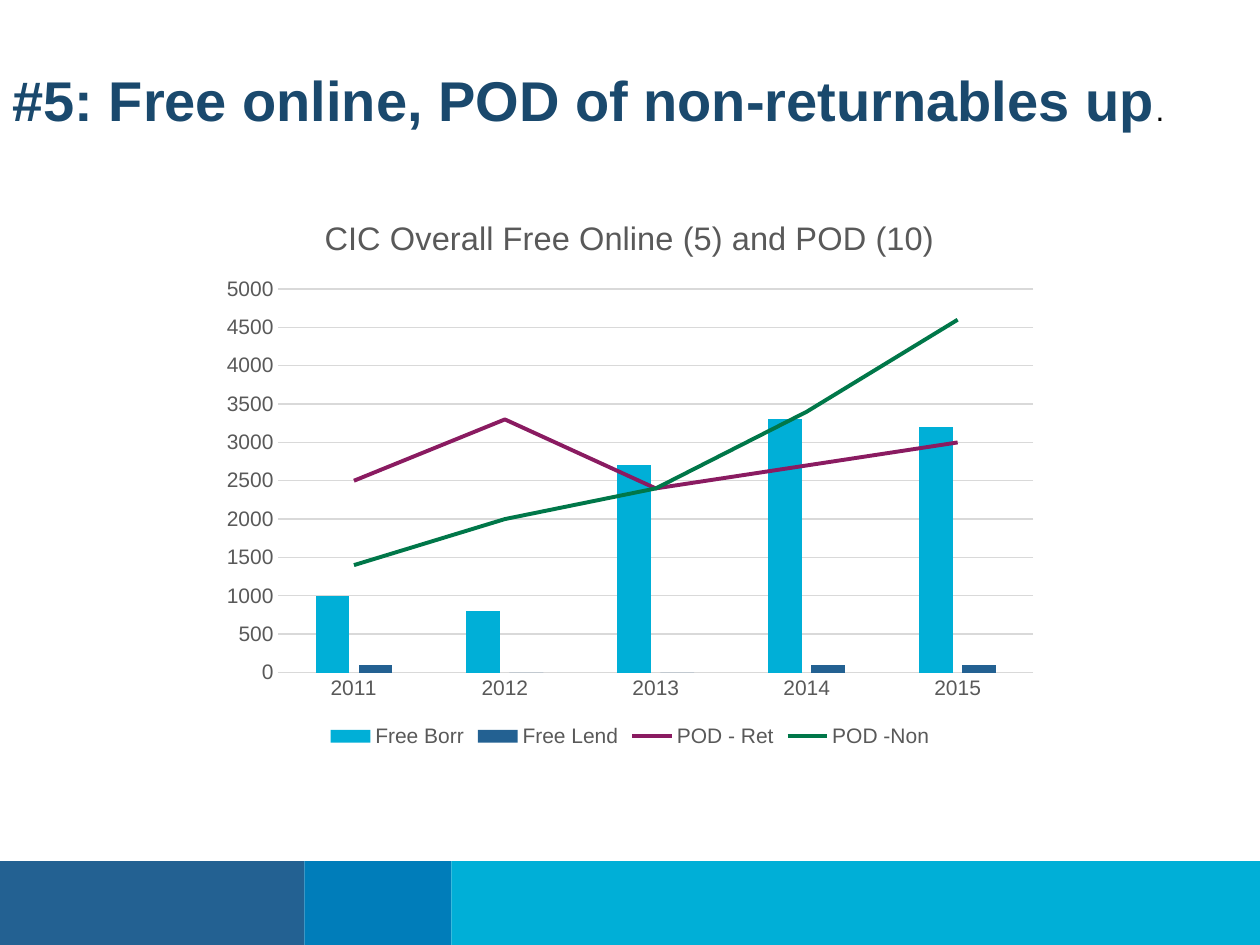
from typing import NamedTuple

from lxml import etree
from pptx import Presentation
from pptx import util as u
from pptx.chart.data import CategoryChartData
from pptx.dml.color import RGBColor
from pptx.enum import chart as ch, shapes, text
from pptx.oxml.ns import qn

Pt = u.Pt
FONT = "Arial"
HUES = {
    "navy": "236192", "blue": "007DBA", "cyan": "00AFD7",
    "plum": "8A1B61", "green": "007749", "title": "1A496D",
    "black": "000000", "gray": "595959", "grid": "D9D9D9",
}


class Band(NamedTuple):
    left: float
    width: float
    hue: str


class Row(NamedTuple):
    name: str
    vals: tuple
    hue: str
    line: bool = False


BANDS = [
    Band(0, 174, "navy"),
    Band(174, 84, "blue"),
    Band(258, 462, "cyan"),
]
YEARS = ["2011", "2012", "2013", "2014", "2015"]
ROWS = [
    Row("Free Borr", (1000, 800, 2700, 3300, 3200), "cyan"),
    Row("Free Lend", (100, 0, 0, 100, 100), "navy"),
    Row("POD - Ret", (2500, 3300, 2400, 2700, 3000), "plum", True),
    Row("POD -Non", (1400, 2000, 2400, 3400, 4600), "green", True),
]


def rgb(hue: str) -> RGBColor:
    return RGBColor.from_string(HUES[hue])


def style(font, size: float, hue: str, bold: bool = False) -> None:
    font.name = FONT
    font.size = Pt(size)
    font.bold = bold
    font.color.rgb = rgb(hue)


def stroke(line, hue: str, width: float) -> None:
    line.color.rgb = rgb(hue)
    line.width = Pt(width)


def draw_band(slide, band: Band) -> None:
    box = slide.shapes.add_shape(
        shapes.MSO_SHAPE.RECTANGLE, Pt(band.left), Pt(492), Pt(band.width), Pt(48))
    box.shadow.inherit = False
    box.fill.solid()
    box.fill.fore_color.rgb = rgb(band.hue)
    box.line.fill.background()


def split_lines(chart) -> None:
    """Move the line rows from the bar plot to a line plot on the same axes."""
    bar = chart.plots[0]._element
    plot = bar.makeelement(qn("c:lineChart"))
    bar.addnext(plot)
    etree.SubElement(plot, qn("c:grouping")).set("val", "standard")
    etree.SubElement(plot, qn("c:varyColors")).set("val", "0")
    for row, ser in zip(ROWS, bar.findall(qn("c:ser"))):
        if row.line:
            for flag in ser.findall(qn("c:invertIfNegative")):
                ser.remove(flag)
            plot.append(ser)
    etree.SubElement(plot, qn("c:marker")).set("val", "1")
    for axis in bar.findall(qn("c:axId")):
        etree.SubElement(plot, qn("c:axId")).set("val", axis.get("val"))


def draw_chart(slide) -> None:
    data = CategoryChartData()
    data.categories = YEARS
    for row in ROWS:
        data.add_series(row.name, row.vals)
    chart = slide.shapes.add_chart(
        ch.XL_CHART_TYPE.COLUMN_CLUSTERED,
        Pt(120), Pt(110), Pt(480), Pt(320), data).chart
    style(chart.font, 10, "black")

    # Title and legend
    chart.has_title = True
    head = chart.chart_title.text_frame
    head.text = "CIC Overall Free Online (5) and POD (10)"
    style(head.paragraphs[0].font, 18.6, "gray")
    chart.chart_title.include_in_layout = False
    chart.has_legend = True
    chart.legend.position = ch.XL_LEGEND_POSITION.BOTTOM
    chart.legend.include_in_layout = False
    style(chart.legend.font, 12, "gray")

    # Axes
    for axis in (chart.category_axis, chart.value_axis):
        axis.major_tick_mark = ch.XL_TICK_MARK.NONE
        axis.minor_tick_mark = ch.XL_TICK_MARK.NONE
        style(axis.tick_labels.font, 12, "gray")
    stroke(chart.category_axis.format.line, "grid", 0.75)
    scale = chart.value_axis
    scale.minimum_scale, scale.maximum_scale, scale.major_unit = 0, 5000, 500
    scale.format.line.fill.background()
    stroke(scale.major_gridlines.format.line, "grid", 0.75)

    # Bars and lines
    bars = chart.plots[0]
    bars.vary_by_categories = False
    bars.gap_width, bars.overlap = 219, -27
    split_lines(chart)
    for row, ser in zip(ROWS, [s for p in chart.plots for s in p.series]):
        if row.line:
            ser.smooth = False
            ser.marker.style = ch.XL_MARKER_STYLE.NONE
            stroke(ser.format.line, row.hue, 2.25)
        else:
            ser.format.fill.solid()
            ser.format.fill.fore_color.rgb = rgb(row.hue)


def draw_title(slide) -> None:
    frame = slide.shapes.add_textbox(Pt(0), Pt(34), Pt(720), Pt(46)).text_frame
    frame.word_wrap = True
    frame.auto_size = text.MSO_AUTO_SIZE.SHAPE_TO_FIT_TEXT
    para = frame.paragraphs[0]
    for words, size, hue, bold in (
        ("#5: Free online, POD of non-returnables up", 32, "title", True),
        (".", 18, "black", False),
    ):
        run = para.add_run()
        run.text = words
        style(run.font, size, hue, bold)


def main() -> None:
    deck = Presentation()
    deck.slide_width, deck.slide_height = Pt(720), Pt(540)
    slide = deck.slides.add_slide(deck.slide_layouts[6])
    for band in BANDS:
        draw_band(slide, band)
    draw_chart(slide)
    draw_title(slide)
    deck.save("out.pptx")


if __name__ == "__main__":
    main()
